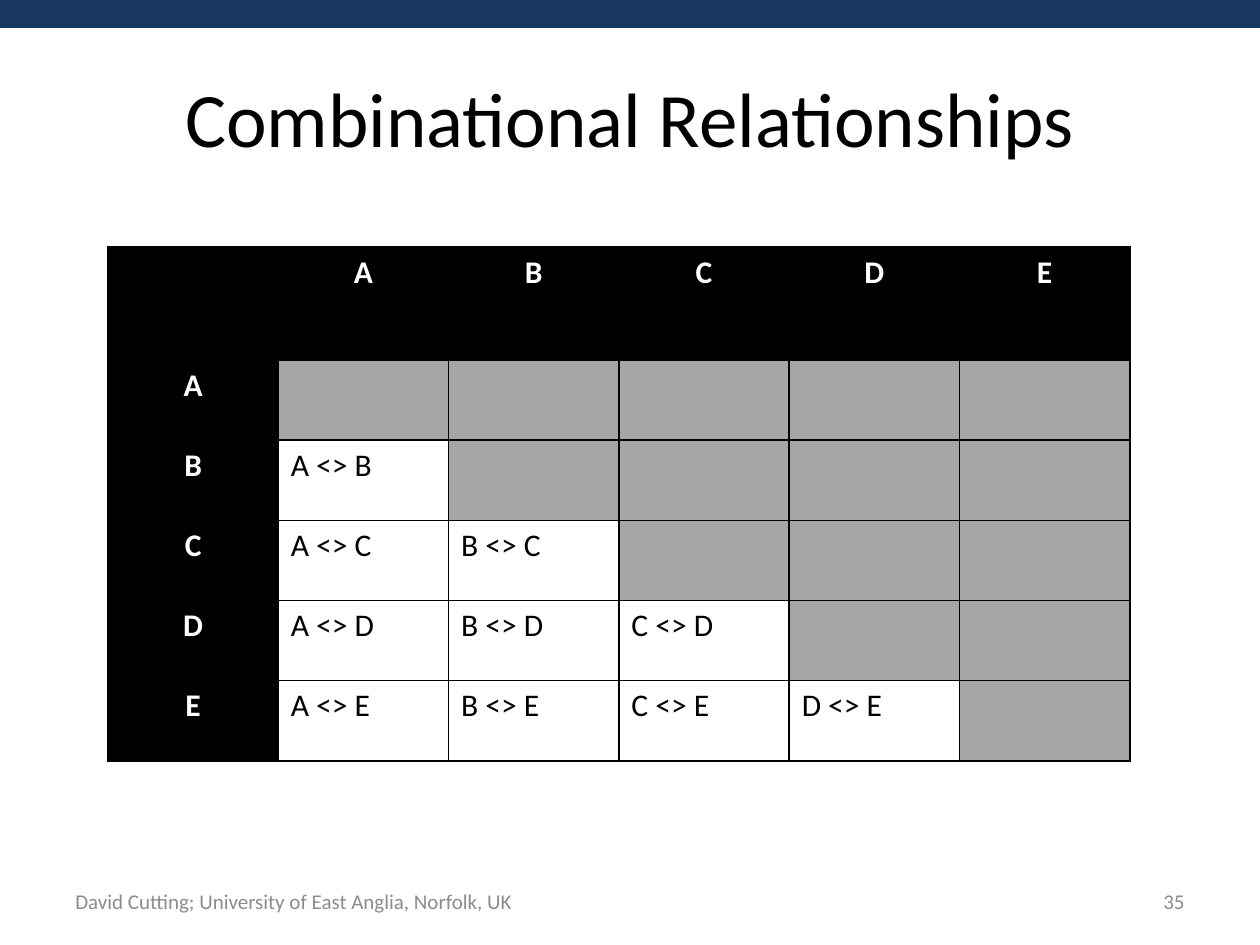
import pptx
import pptx.util
import pptx.dml.color
import pptx.enum.shapes
import pptx.enum.text
import pptx.oxml
import pptx.oxml.ns

PX = pptx.util.Inches(1) / 126
FONT = "Calibri"
COLORS = {
    "band": "17375E",
    "ink": "000000",
    "paper": "FFFFFF",
    "unused": "A6A6A6",
    "footer": "8C8C8C",
}
ALIGN = pptx.enum.text.PP_ALIGN
ITEMS = "ABCDE"
HEADER_HEIGHT = 113


def px(n):
    return round(n * PX)


def rgb(name):
    return pptx.dml.color.RGBColor.from_string(COLORS[name])


def add_run(tf, text, size, color, align=ALIGN.LEFT, bold=False):
    p = tf.paragraphs[0]
    p.alignment = align
    r = p.add_run()
    r.text = text
    r.font.name = FONT
    r.font.size = pptx.util.Pt(size)
    r.font.bold = bold
    r.font.color.rgb = rgb(color)


def add_band(s, x, y, w, h):
    band = s.shapes.add_shape(
        pptx.enum.shapes.MSO_SHAPE.RECTANGLE, px(x), px(y), px(w), px(h))
    band.shadow.inherit = False
    band.fill.solid()
    band.fill.fore_color.rgb = rgb("band")
    band.line.fill.background()


def set_title(s, text, x, y, w, h):
    title = s.shapes.title
    title.left, title.top, title.width, title.height = map(px, (x, y, w, h))
    tf = title.text_frame
    tf.vertical_anchor = pptx.enum.text.MSO_ANCHOR.MIDDLE
    add_run(tf, text, 44, "ink", ALIGN.CENTER)


def add_footer(s, x, y, w, h):
    """Place the author line on the left and the slide number on the right."""
    author_w, number_w = 766, 294
    parts = [
        ("David Cutting; University of East Anglia, Norfolk, UK",
         x, author_w, ALIGN.LEFT),
        ("35", x + w - number_w, number_w, ALIGN.RIGHT),
    ]
    for text, left, width, align in parts:
        sp = s.shapes.add_textbox(px(left), px(y), px(width), px(h))
        tf = sp.text_frame
        tf.word_wrap = True
        tf.vertical_anchor = pptx.enum.text.MSO_ANCHOR.MIDDLE
        add_run(tf, text, 12, "footer", align)


def style_cell(cell, fill):
    """Give the cell thin borders on all sides and a solid fill."""
    tc_pr = cell._tc.get_or_add_tcPr()
    for side in "LRTB":
        tc_pr.append(pptx.oxml.parse_xml(
            f'<a:ln{side} {pptx.oxml.ns.nsdecls("a")} w="12700"><a:solidFill>'
            f'<a:srgbClr val="{COLORS["ink"]}"/></a:solidFill></a:ln{side}>'))
    cell.fill.solid()
    cell.fill.fore_color.rgb = rgb(fill)


def add_pair_matrix(s, x, y, w, h):
    """Fill the lower triangle with one pair for each two items."""
    n = len(ITEMS) + 1
    table = s.shapes.add_table(n, n, px(x), px(y), px(w), px(h)).table
    for column in table.columns:
        column.width = px(w / n)
    for i, row in enumerate(table.rows):
        row.height = px((h - HEADER_HEIGHT) / (n - 1) if i else HEADER_HEIGHT)

    labels = ("",) + tuple(ITEMS)
    for i, row_label in enumerate(labels):
        for j, col_label in enumerate(labels):
            cell = table.cell(i, j)
            tf = cell.text_frame
            if i == 0 or j == 0:
                style_cell(cell, "ink")
                if row_label or col_label:
                    add_run(tf, row_label or col_label, 18, "paper",
                            ALIGN.CENTER, bold=True)
            elif j < i:
                style_cell(cell, "paper")
                add_run(tf, f"{col_label} <> {row_label}", 18, "ink")
            else:
                style_cell(cell, "unused")


def main():
    prs = pptx.Presentation()
    prs.slide_width, prs.slide_height = px(1260), px(945)
    s = prs.slides.add_slide(prs.slide_layouts.get_by_name("Title Only"))
    add_band(s, 0, -1, 1260, 29)
    set_title(s, "Combinational Relationships", 63, 38, 1134, 157)
    add_footer(s, 63, 876, 1134, 50)
    add_pair_matrix(s, 108, 247, 1022, 514)
    prs.save("out.pptx")


if __name__ == "__main__":
    main()
